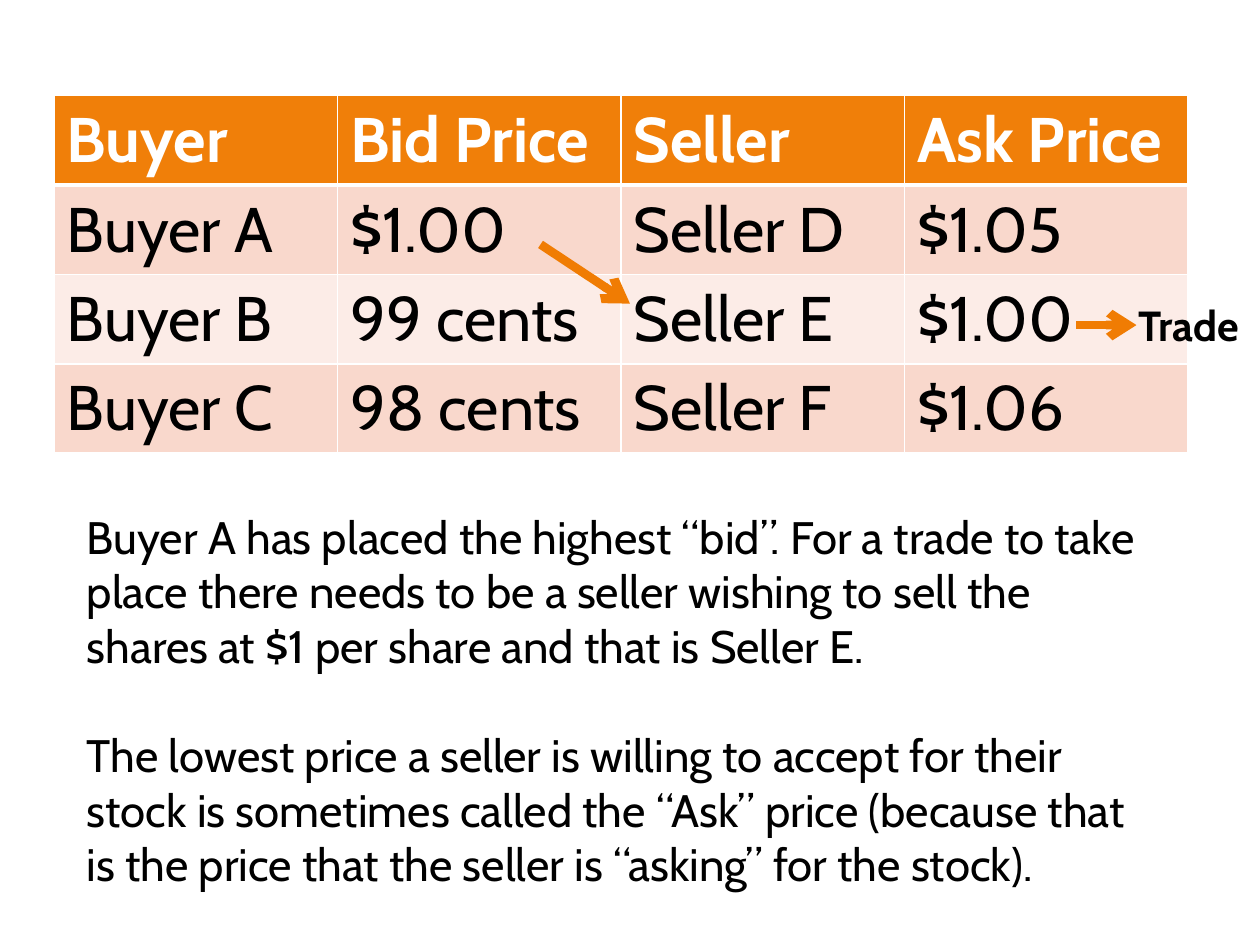
from lxml.etree import SubElement
from pptx import Presentation
from pptx.dml.color import RGBColor
from pptx.enum.shapes import MSO_CONNECTOR
from pptx.oxml.ns import qn
from pptx.util import Inches, Pt

COLORS = {
    "header": "F07F09",
    "odd_row": "F9D8CC",
    "even_row": "FCECE7",
    "arrow": "F07C03",
    "border": "FFFFFF",
    "header_text": "FFFFFF",
    "text": "000000",
}
LEFT, TOP = 0.43, 0.76
COLUMN, ROW = 2.25, 0.7

QUOTES = [
    ["Buyer", "Bid Price", "Seller", "Ask Price"],
    ["Buyer A", "$1.00", "Seller D", "$1.05"],
    ["Buyer B", "99 cents", "Seller E", "$1.00"],
    ["Buyer C", "98 cents", "Seller F", "$1.06"],
]
EXPLANATION = [
    "Buyer A has placed the highest “bid”. For a trade to take place there needs "
    "to be a seller wishing to sell the shares at $1 per share and that is Seller E.",
    "The lowest price a seller is willing to accept for their stock is sometimes "
    "called the “Ask” price (because that is the price that the seller is “asking” "
    "for the stock).",
]


def write(frame, *paragraphs, size, color="text", bold=False, gap=0):
    """Fill a text frame, leaving gap points between paragraphs."""
    frame.word_wrap = True
    for index, text in enumerate(paragraphs):
        paragraph = frame.add_paragraph() if index else frame.paragraphs[0]
        paragraph.space_before = Pt(gap if index else 0)
        run = paragraph.add_run()
        run.text = text
        run.font.name = "Cabin"
        run.font.size = Pt(size)
        run.font.bold = bold
        run.font.color.rgb = RGBColor.from_string(COLORS[color])


def add_border(cell, side, width):
    line = SubElement(cell._tc.get_or_add_tcPr(), qn(f"a:ln{side}"), w=str(Pt(width)))
    fill = SubElement(line, qn("a:solidFill"))
    SubElement(fill, qn("a:srgbClr"), val=COLORS["border"])


prs = Presentation()
prs.slide_width, prs.slide_height = Inches(10), Inches(7.5)
slide = prs.slides.add_slide(prs.slide_layouts[6])
shapes = slide.shapes

# Order book
order_book = shapes.add_table(
    len(QUOTES), len(QUOTES[0]), Inches(LEFT), Inches(TOP),
    Inches(COLUMN * len(QUOTES[0])), Inches(ROW * len(QUOTES)),
).table
for row, quote in enumerate(QUOTES):
    is_header = row == 0
    band = "header" if is_header else "odd_row" if row % 2 else "even_row"
    for column, entry in enumerate(quote):
        cell = order_book.cell(row, column)
        for side in "LRTB":
            thick = (side == "B" and row == 0) or (side == "T" and row == 1)
            add_border(cell, side, 3 if thick else 1)
        cell.fill.solid()
        cell.fill.fore_color.rgb = RGBColor.from_string(COLORS[band])
        write(cell.text_frame, entry, size=36, bold=is_header,
              color="header_text" if is_header else "text")

# Arrows from the best bid to the matching seller, and on to the trade
trade_y = TOP + 2.6 * ROW
for start_x, start_y, end_x, end_y in [
    (4.29, 1.94, 5, 2.41),
    (8.54, trade_y, 9.02, trade_y),
]:
    arrow = shapes.add_connector(
        MSO_CONNECTOR.STRAIGHT,
        Inches(start_x), Inches(start_y), Inches(end_x), Inches(end_y),
    )
    arrow.line.width = Pt(5)
    arrow.line.color.rgb = RGBColor.from_string(COLORS["arrow"])
    SubElement(arrow.line._get_or_add_ln(), qn("a:tailEnd"), type="arrow")
    SubElement(arrow._element.spPr, qn("a:effectLst"))

# Captions
trade = shapes.add_textbox(Inches(8.94), Inches(2.33), Inches(1.06), Inches(0.5))
write(trade.text_frame, "Trade", size=24, bold=True)

explanation = shapes.add_textbox(Inches(0.59), Inches(3.99), Inches(8.74), Inches(3.16))
write(explanation.text_frame, *EXPLANATION, size=26, gap=31.2)

prs.save("out.pptx")
